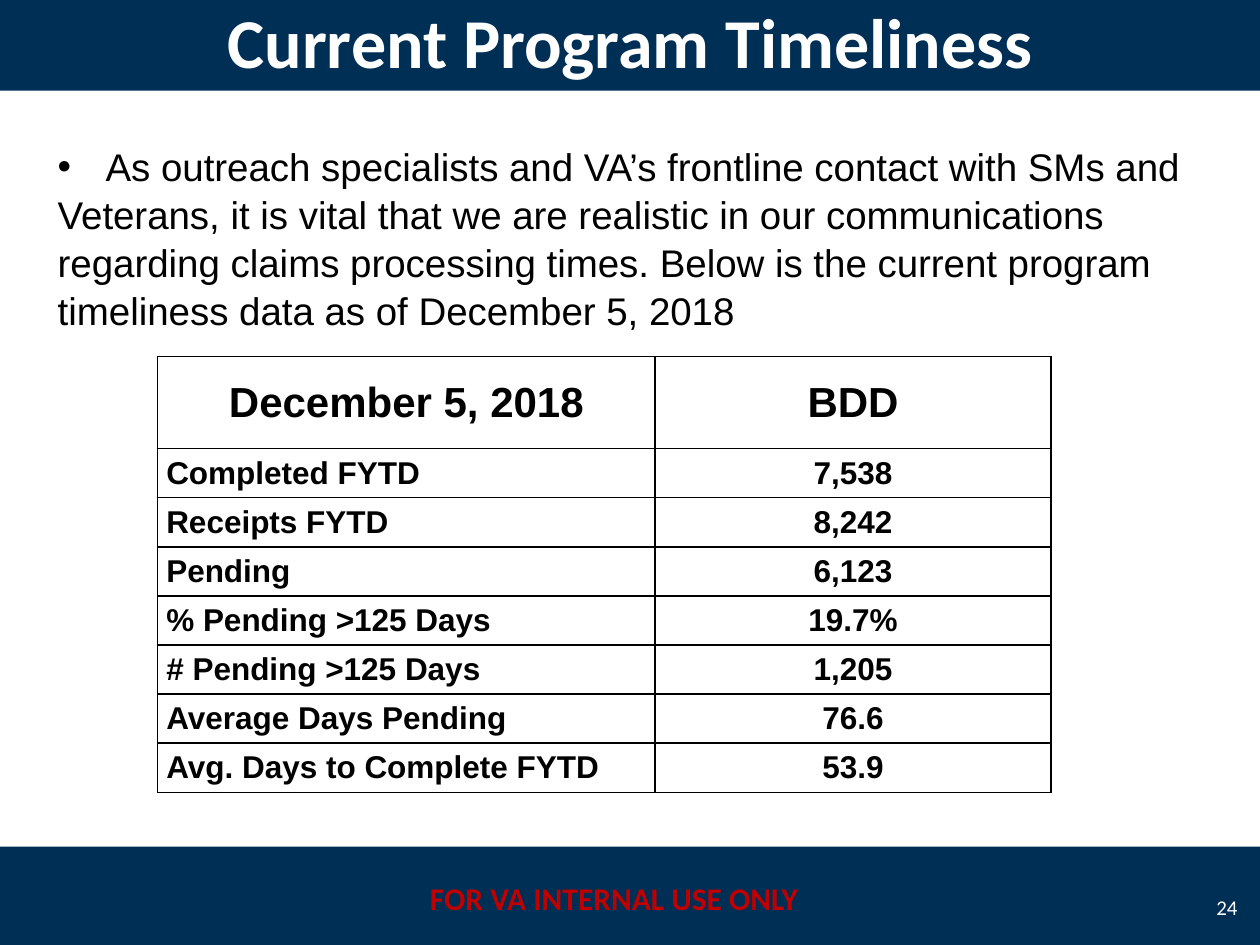
import pptx
import pptx.util
import pptx.dml.color
import pptx.enum.shapes
import pptx.enum.text
import pptx.oxml
import pptx.oxml.ns
from dataclasses import dataclass
from lxml import etree

Inches, Pt = pptx.util.Inches, pptx.util.Pt
PP = pptx.enum.text.PP_ALIGN
MIDDLE = pptx.enum.text.MSO_ANCHOR.MIDDLE
qn = pptx.oxml.ns.qn


@dataclass(frozen=True)
class Theme:
    navy: str = "002F56"
    red: str = "C00000"
    white: str = "FFFFFF"
    black: str = "000000"
    head: str = "Calibri"
    body: str = "Arial"
    title_pt: int = 40
    header_pt: int = 24
    body_pt: int = 22
    cell_pt: int = 18
    number_pt: int = 12


T = Theme()
HEADER = ("December 5, 2018", "BDD")
ROWS = (
    ("Completed FYTD", "7,538"),
    ("Receipts FYTD", "8,242"),
    ("Pending", "6,123"),
    ("% Pending >125 Days", "19.7%"),
    ("# Pending >125 Days", "1,205"),
    ("Average Days Pending", "76.6"),
    ("Avg. Days to Complete FYTD", "53.9"),
)
INTRO = (
    "As outreach specialists and VA’s frontline contact with SMs and",
    "Veterans, it is vital that we are realistic in our communications "
    "regarding claims processing times. Below is the current program "
    "timeliness data as of December 5, 2018",
)


def rgb(color):
    return pptx.dml.color.RGBColor.from_string(color)


def write(p, text, color, align=PP.LEFT, **fmt):
    p.alignment = align
    r = p.add_run()
    r.text = text
    r.font.color.rgb = rgb(color)
    for name, value in fmt.items():
        setattr(r.font, name, value)


def add_text(s, box):
    tf = s.shapes.add_textbox(*map(Inches, box)).text_frame
    tf.word_wrap = True
    return tf


def add_bar(s, box):
    sp = s.shapes.add_shape(pptx.enum.shapes.MSO_SHAPE.RECTANGLE, *map(Inches, box))
    sp.shadow.inherit = False
    sp.fill.solid()
    sp.fill.fore_color.rgb = rgb(T.navy)
    sp.line.fill.background()


def add_title(s, box):
    add_bar(s, box)
    tf = add_text(s, box)
    tf.vertical_anchor = MIDDLE
    write(tf.paragraphs[0], "Current Program Timeliness", T.white, PP.CENTER,
          name=T.head, size=Pt(T.title_pt), bold=True)


def add_footer(s, box):
    add_bar(s, box)
    x, y = box[:2]
    # Handling notice
    tf = add_text(s, (x + 3.25, y + 0.21, 3.25, 0.4))
    write(tf.paragraphs[0], "FOR VA INTERNAL USE ONLY", T.red, PP.CENTER,
          name=T.head, size=Pt(T.cell_pt), bold=True)
    # Slide number
    tf = add_text(s, (x + 9.5, y + 0.28, 0.42, 0.4))
    tf.vertical_anchor = MIDDLE
    write(tf.paragraphs[0], "24", T.white, PP.RIGHT,
          name=T.head, size=Pt(T.number_pt))


def add_bullet(p, indent):
    pPr = p._p.get_or_add_pPr()
    pPr.set("marL", str(indent))
    pPr.set("indent", str(-indent))
    etree.SubElement(pPr, qn("a:buFont"), typeface=T.body)
    etree.SubElement(pPr, qn("a:buChar"), char="•")


def add_intro(s, box):
    tf = add_text(s, box)
    for i, text in enumerate(INTRO):
        p = tf.add_paragraph() if i else tf.paragraphs[0]
        p.line_spacing = 1.04
        if i == 0:
            add_bullet(p, Inches(0.38))
        write(p, text, T.black, name=T.body, size=Pt(T.body_pt))


def add_borders(cell):
    tcPr = cell._tc.get_or_add_tcPr()
    for i, side in enumerate(("lnL", "lnR", "lnT", "lnB")):
        ln = etree.Element(qn("a:" + side), w=str(Pt(1)))
        fill = etree.SubElement(ln, qn("a:solidFill"))
        etree.SubElement(fill, qn("a:srgbClr"), val=T.black)
        tcPr.insert(i, ln)


def add_timeliness_table(s, box):
    rows = (HEADER,) + ROWS
    table = s.shapes.add_table(len(rows), 2, *map(Inches, box)).table
    table.first_row = table.horz_banding = False
    for col, width in zip(table.columns, (3.95, 3.14)):
        col.width = Inches(width)
    cell_format = dict(vertical_anchor=MIDDLE,
                       margin_left=Inches(0.07), margin_right=Inches(0.07),
                       margin_top=0, margin_bottom=0)
    for i, values in enumerate(rows):
        table.rows[i].height = Inches(0.39 if i else 0.73)
        for j, text in enumerate(values):
            cell = table.cell(i, j)
            for name, value in cell_format.items():
                setattr(cell, name, value)
            cell.fill.background()
            add_borders(cell)
            write(cell.text_frame.paragraphs[0], text, T.black,
                  PP.LEFT if i and j == 0 else PP.CENTER, name=T.body,
                  size=Pt(T.cell_pt if i else T.header_pt), bold=True)


def main():
    prs = pptx.Presentation()
    prs.slide_width, prs.slide_height = Inches(10), Inches(7.5)
    s = prs.slides.add_slide(prs.slide_layouts[6])
    add_footer(s, (0, 6.72, 10, 0.8))
    add_title(s, (0, -0.08, 10, 0.8))
    add_intro(s, (0.36, 1.07, 9.5, 1.58))
    add_timeliness_table(s, (1.25, 2.83, 7.09, 3.46))
    prs.save("out.pptx")


if __name__ == "__main__":
    main()
